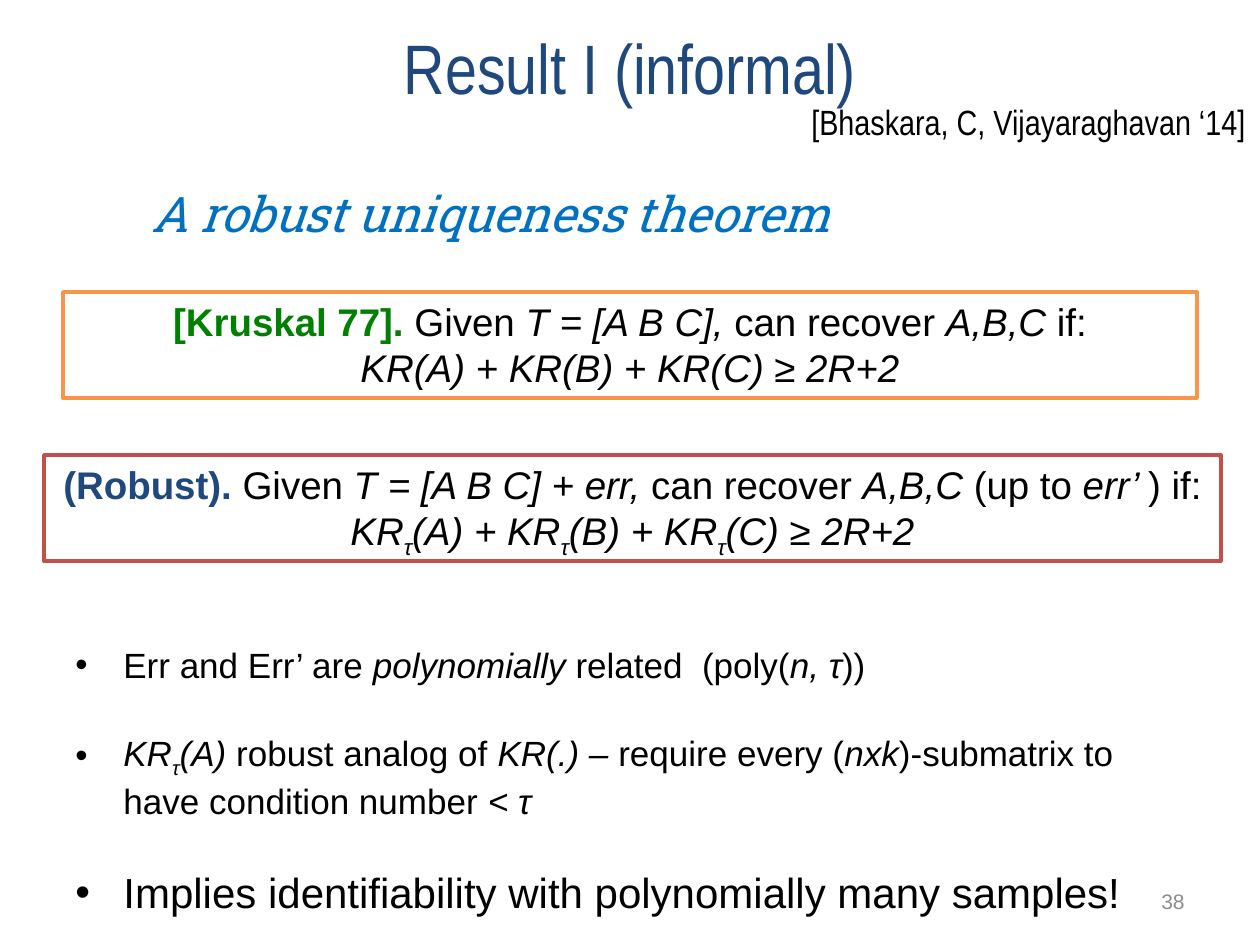
from pptx import Presentation
from pptx.dml.color import RGBColor
from pptx.enum.shapes import MSO_SHAPE as Preset
from pptx.enum.text import MSO_ANCHOR as Anchor, PP_ALIGN as Align
from pptx.oxml.ns import qn
from pptx.util import Pt
from lxml.etree import SubElement

PX = 914400 // 126
BLACK, NAVY, GREEN, BLUE, GRAY = "000000", "1F497D", "008000", "0070C0", "8C8C8C"

LABELS = [
    ("Result I (informal)", (32, 13, 1196, 106), 40, "Arial Narrow", NAVY, Align.CENTER, Anchor.MIDDLE, ""),
    ("38", (903, 876, 294, 50), 12, "Arial", GRAY, Align.RIGHT, Anchor.MIDDLE, ""),
    ("A robust uniqueness theorem", (139, 164, 887, 97), 28, "Roboto Slab", BLUE, Align.LEFT, Anchor.MIDDLE, "i"),
    ("[Bhaskara, C, Vijayaraghavan ‘14]", (799, 94, 507, 55), 20, "Arial Narrow", BLACK, Align.LEFT, Anchor.TOP, ""),
]

THEOREMS = [
    ((63, 292, 1134, 106), "F79646", GREEN, [
        [("[Kruskal 77].", "b"), (" Given ", ""), ("T = [A B C],", "i"), (" can recover ", ""),
         ("A,B,C", "i"), (" if:", "")],
        [("KR(A) + KR(B) + KR(C) ≥ 2R+2", "i")],
    ]),
    ((44, 455, 1177, 106), "C0504D", NAVY, [
        [("(Robust).", "b"), (" Given ", ""), ("T = [A B C] + err,", "i"), (" can recover ", ""),
         ("A,B,C ", "i"), ("(up to ", ""), ("err’ ", "i"), (") if:", "")],
        [("KR", "i"), ("τ", "is"), ("(A) + KR", "i"), ("τ", "is"), ("(B) + KR", "i"), ("τ", "is"),
         ("(C) ≥ 2R+2", "i")],
    ]),
]

BULLETS_BOX = (63, 583, 1134, 378)
BULLETS = [
    (20, [("Err and Err’ are ", ""), ("polynomially", "i"), (" related  (poly(", ""), ("n, τ", "i"), ("))", "")]),
    (20, [("KR", "i"), ("τ", "is"), ("(A) ", "i"), ("robust analog of ", ""), ("KR(.) – ", "i"),
          ("require every (", ""), ("nxk", "i"), (")-submatrix to have condition number ", ""), ("< τ", "i")]),
    (24, [("Implies identifiability with polynomially many samples!", "")]),
]


def rgb(color):
    return RGBColor.from_string(color)


def scaled(box):
    return [value * PX for value in box]


def add_runs(paragraph, runs, size, font="Arial", color=BLACK, bold_color=BLACK):
    for text, style in runs:
        run = paragraph.add_run()
        run.text = text
        run.font.size = Pt(size)
        run.font.name = font
        run.font.bold = "b" in style
        run.font.italic = "i" in style
        run.font.color.rgb = rgb(bold_color if "b" in style else color)
        if "s" in style:
            run.font._element.set("baseline", "-25000")


def add_text_box(slide, box, anchor=Anchor.TOP):
    text_frame = slide.shapes.add_textbox(*scaled(box)).text_frame
    text_frame.word_wrap = True
    text_frame.vertical_anchor = anchor
    return text_frame


def next_paragraph(text_frame, index):
    return text_frame.add_paragraph() if index else text_frame.paragraphs[0]


def add_theorem(slide, box, line_color, heading_color, lines):
    shape = slide.shapes.add_shape(Preset.RECTANGLE, *scaled(box))
    shape.shadow.inherit = False
    shape.fill.solid()
    shape.fill.fore_color.rgb = rgb("FFFFFF")
    shape.line.color.rgb = rgb(line_color)
    shape.line.width = Pt(2)
    shape.text_frame.word_wrap = True
    shape.text_frame.vertical_anchor = Anchor.TOP
    for index, runs in enumerate(lines):
        paragraph = next_paragraph(shape.text_frame, index)
        paragraph.alignment = Align.CENTER
        add_runs(paragraph, runs, 22, bold_color=heading_color)


def add_bullets(slide):
    text_frame = add_text_box(slide, BULLETS_BOX)
    text_frame.margin_top = 61 * PX
    for index, (size, runs) in enumerate(BULLETS):
        paragraph = next_paragraph(text_frame, index)
        if index:
            paragraph.space_before = Pt(26)
        properties = paragraph._p.get_or_add_pPr()
        properties.set("marL", str(48 * PX))
        properties.set("indent", str(-48 * PX))
        SubElement(properties, qn("a:buFont"), typeface="Arial")
        SubElement(properties, qn("a:buChar"), char="•")
        add_runs(paragraph, runs, size)


def main():
    presentation = Presentation()
    presentation.slide_width, presentation.slide_height = scaled((1260, 945))
    slide = presentation.slides.add_slide(presentation.slide_layouts[6])
    for text, box, size, font, color, alignment, anchor, style in LABELS:
        paragraph = add_text_box(slide, box, anchor).paragraphs[0]
        paragraph.alignment = alignment
        add_runs(paragraph, [(text, style)], size, font, color)
    for theorem in THEOREMS:
        add_theorem(slide, *theorem)
    add_bullets(slide)
    presentation.save("out.pptx")


if __name__ == "__main__":
    main()
